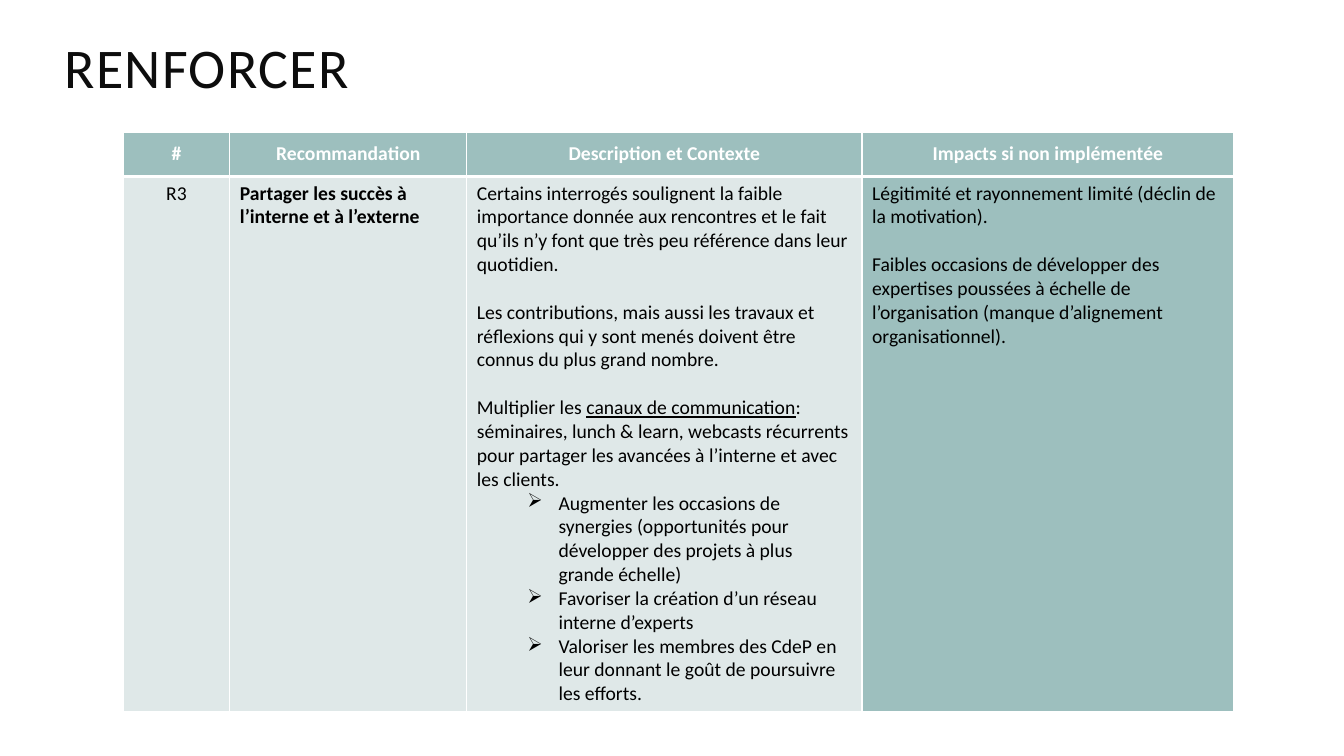
from lxml.etree import SubElement
from pptx import Presentation
from pptx.dml.color import RGBColor
from pptx.enum.text import MSO_ANCHOR, PP_ALIGN
from pptx.oxml.ns import qn
from pptx.util import Inches, Pt

WHITE = RGBColor(0xFF, 0xFF, 0xFF)
BLACK = RGBColor(0x00, 0x00, 0x00)
INK = RGBColor(0x0D, 0x0D, 0x0D)
TEAL = RGBColor(0x9D, 0xBF, 0xBE)
PALE = RGBColor(0xDF, 0xE8, 0xE8)
FONT = "Calibri"
BLANK_LINE = Pt(17)

COLUMN_WIDTHS = [1.06, 2.35, 3.92, 3.69]
ROW_HEIGHTS = [0.44, 5.0]
HEADINGS = ["#", "Recommandation", "Description et Contexte", "Impacts si non implémentée"]
CONTEXT = [
    ["Certains interrogés soulignent la faible importance donnée aux rencontres et le fait "
     "qu’ils n’y font que très peu référence dans leur quotidien."],
    ["Les contributions, mais aussi les travaux et réflexions qui y sont menés doivent être "
     "connus du plus grand nombre."],
    ["Multiplier les ", "canaux de communication",
     ": séminaires, lunch & learn, webcasts récurrents pour partager les avancées à "
     "l’interne et avec les clients."],
]
ACTIONS = [
    "Augmenter les occasions de synergies (opportunités pour développer des projets à plus "
    "grande échelle)",
    "Favoriser la création d’un réseau interne d’experts",
    "Valoriser les membres des CdeP en leur donnant le goût de poursuivre les efforts.",
]
IMPACTS = [
    ["Légitimité et rayonnement limité (déclin de la motivation)."],
    ["Faibles occasions de développer des expertises poussées à échelle de l’organisation "
     "(manque d’alignement organisationnel)."],
]


def add_run(paragraph, text, color, size=14, **styles):
    run = paragraph.add_run()
    run.text = text
    run.font.color.rgb = color
    formats = {"name": FONT, "size": Pt(size), "bold": False, **styles}
    for attribute, value in formats.items():
        setattr(run.font, attribute, value)
    return run


def style_cell(cell, fill, top, bottom):
    properties = cell._tc.get_or_add_tcPr()
    for side, width in {"L": 1, "R": 1, "T": top, "B": bottom}.items():
        border = SubElement(properties, qn(f"a:ln{side}"), w=str(Pt(width)))
        color = SubElement(border, qn("a:solidFill"))
        SubElement(color, qn("a:srgbClr"), val=str(WHITE))
    cell.fill.solid()
    cell.fill.fore_color.rgb = fill


def write_paragraphs(frame, paragraphs):
    for index, texts in enumerate(paragraphs):
        paragraph = frame.paragraphs[0] if index == 0 else frame.add_paragraph()
        if index < len(paragraphs) - 1:
            paragraph.space_after = BLANK_LINE
        for position, text in enumerate(texts):
            add_run(paragraph, text, BLACK, underline=position == 1)


def write_actions(frame, actions):
    for action in actions:
        paragraph = frame.add_paragraph()
        paragraph.level = 1
        add_run(paragraph, action, BLACK)
        properties = paragraph._p.get_or_add_pPr()
        properties.set("marL", str(Inches(0.81)))
        properties.set("indent", str(Inches(-0.31)))
        SubElement(properties, qn("a:buChar"), char="➢")


def add_title(slide, left, top, width, height):
    title = slide.shapes.add_textbox(left, top, width, height)
    frame = title.text_frame
    frame.word_wrap = True
    frame.vertical_anchor = MSO_ANCHOR.MIDDLE
    paragraph = frame.paragraphs[0]
    paragraph.line_spacing = 0.8
    run = add_run(paragraph, "RENFORCER", INK, size=40)
    run.font._element.set("spc", "100")


def add_recommendation_table(slide, left, top, width, height):
    table = slide.shapes.add_table(2, len(HEADINGS), left, top, width, height).table
    table.horz_banding = False
    for column, column_width in zip(table.columns, COLUMN_WIDTHS):
        column.width = Inches(column_width)
    for row, row_height in zip(table.rows, ROW_HEIGHTS):
        row.height = Inches(row_height)

    for cell, heading in zip(table.rows[0].cells, HEADINGS):
        style_cell(cell, TEAL, 1, 3)
        cell.vertical_anchor = MSO_ANCHOR.MIDDLE
        paragraph = cell.text_frame.paragraphs[0]
        paragraph.alignment = PP_ALIGN.CENTER
        add_run(paragraph, heading, WHITE, bold=True)

    number, recommendation, context, impacts = table.rows[1].cells
    for cell in (number, recommendation, context):
        style_cell(cell, PALE, 3, 1)
    style_cell(impacts, TEAL, 3, 1)

    number_line = number.text_frame.paragraphs[0]
    number_line.alignment = PP_ALIGN.CENTER
    add_run(number_line, "R3", BLACK)
    add_run(recommendation.text_frame.paragraphs[0],
            "Partager les succès à l’interne et à l’externe", BLACK, bold=True)
    write_paragraphs(context.text_frame, CONTEXT)
    write_actions(context.text_frame, ACTIONS)
    write_paragraphs(impacts.text_frame, IMPACTS)


def main():
    presentation = Presentation()
    presentation.slide_width = Inches(13.33)
    presentation.slide_height = Inches(7.5)
    slide = presentation.slides.add_slide(presentation.slide_layouts[6])
    add_recommendation_table(slide, Inches(1.22), Inches(1.31),
                             Inches(sum(COLUMN_WIDTHS)), Inches(sum(ROW_HEIGHTS)))
    add_title(slide, Inches(0.54), Inches(-0.1), Inches(10.63), Inches(1.64))
    presentation.save("out.pptx")


if __name__ == "__main__":
    main()
